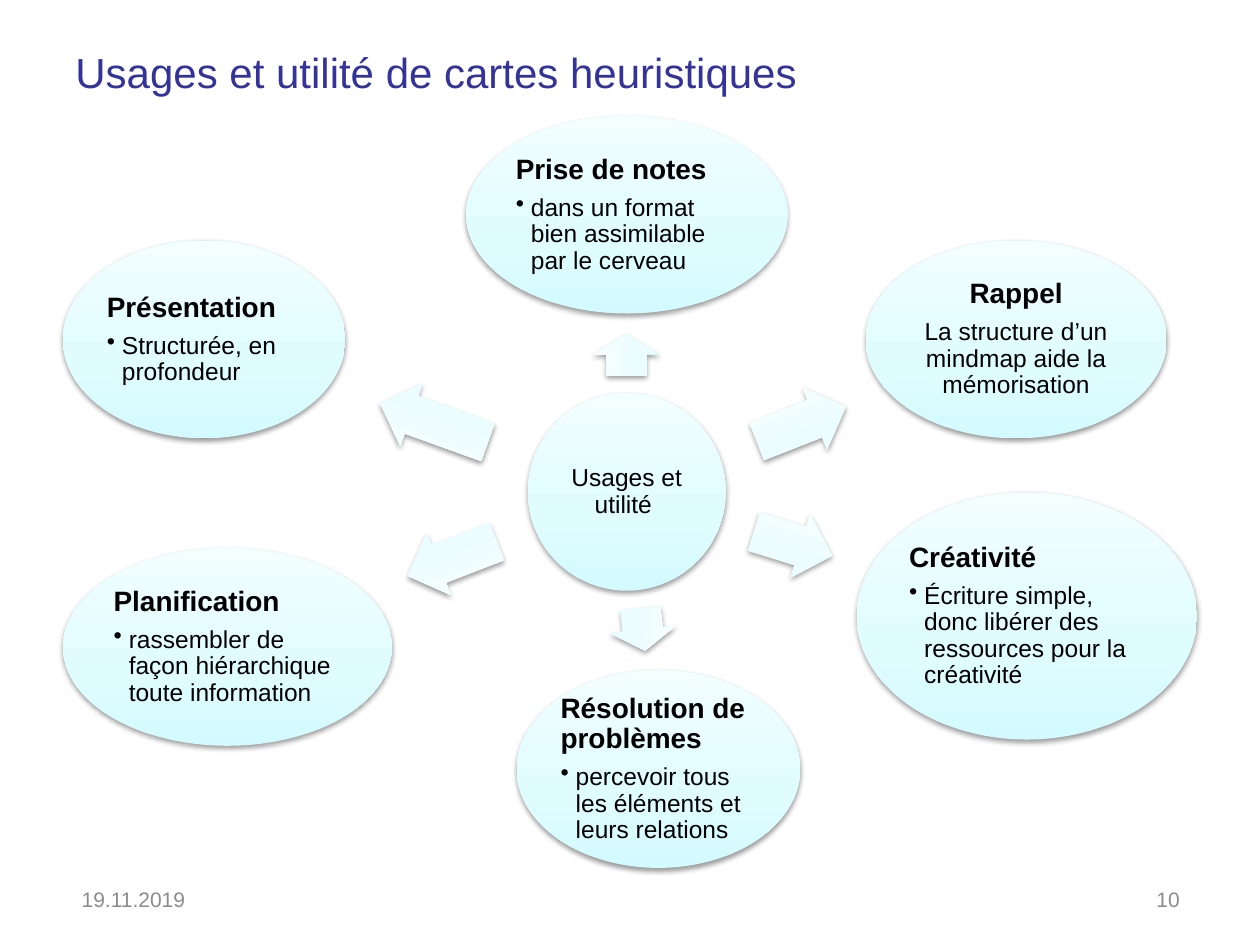
from dataclasses import dataclass

from lxml import etree
from pptx import Presentation
from pptx.dml.color import RGBColor
from pptx.enum.shapes import MSO_SHAPE
from pptx.enum.text import MSO_ANCHOR, PP_ALIGN
from pptx.oxml import parse_xml
from pptx.oxml.ns import nsdecls, qn
from pptx.util import Pt

OVAL, ARROW = MSO_SHAPE.OVAL, MSO_SHAPE.RIGHT_ARROW
MIDDLE = MSO_ANCHOR.MIDDLE
LEFT, CENTER, RIGHT = PP_ALIGN.LEFT, PP_ALIGN.CENTER, PP_ALIGN.RIGHT

BLACK = RGBColor(0x00, 0x00, 0x00)
INDIGO = RGBColor(0x33, 0x33, 0x99)
GREY = RGBColor(0x8C, 0x8C, 0x8C)
# Gradient stops at 0, 35 and 100 %, running from bottom to top
STOPS = (0, 35, 100)
BUBBLE_FILL = (RGBColor(0xD3, 0xFB, 0xFF), RGBColor(0xDF, 0xFC, 0xFF),
               RGBColor(0xF2, 0xFE, 0xFF))
ARROW_FILL = (RGBColor(0xE5, 0xFD, 0xFF), RGBColor(0xEC, 0xFD, 0xFF),
              RGBColor(0xF7, 0xFE, 0xFF))

FONT = "Arial"
INSET = 1.44
INDENT = 8.64
ARROW_BREADTH = 38.2


@dataclass(frozen=True)
class Frame:
    left: float
    top: float
    width: float
    height: float

    def lengths(self):
        return [Pt(v) for v in (self.left, self.top, self.width, self.height)]


@dataclass(frozen=True)
class Arrow:
    left: float
    top: float
    length: float
    rotation: float


@dataclass(frozen=True)
class Topic:
    heading: str
    detail: str
    frame: Frame
    arrow: Arrow
    bulleted: bool = True


HUB = Frame(301.7, 224.6, 113, 113)
TOPICS = [
    Topic("Prise de notes", "dans un format bien assimilable par le cerveau",
          Frame(266.4, 66.2, 183.6, 113), Arrow(346.3, 183.6, 23.8, 270)),
    Topic("Rappel", "La structure d’un mindmap aide la mémorisation",
          Frame(494.6, 137.5, 172.1, 113), Arrow(430.6, 223.2, 54.7, 338.6),
          bulleted=False),
    Topic("Créativité",
          "Écriture simple, donc libérer des ressources pour la créativité",
          Frame(489.6, 281.5, 194.4, 141.1), Arrow(429.8, 291.6, 46.8, 17.2)),
    Topic("Résolution de problèmes",
          "percevoir tous les éléments et leurs relations",
          Frame(295.2, 383, 162, 113), Arrow(355, 340.6, 24.5, 83.5)),
    Topic("Planification", "rassembler de façon hiérarchique toute information",
          Frame(36, 313.2, 187.9, 113), Arrow(231.1, 300.2, 54.7, 158.9)),
    Topic("Présentation", "Structurée, en profondeur",
          Frame(36, 137.5, 161.3, 113), Arrow(215.3, 222.5, 65.5, 199.8)),
]


def set_all(target, values: dict) -> None:
    for name, value in values.items():
        setattr(target, name, value)


def write(para, text: str, size: float, color: RGBColor = BLACK,
          bold: bool = False, **layout) -> None:
    """Fill a paragraph with one span; layout holds paragraph attributes."""
    set_all(para, layout)
    span = para.add_run()
    span.text = text
    set_all(span.font, {"name": FONT, "size": Pt(size), "bold": bold})
    span.font.color.rgb = color


def add_bullet(para) -> None:
    props = para._p.get_or_add_pPr()
    props.set("marL", str(Pt(INDENT)))
    props.set("indent", str(-Pt(INDENT)))
    etree.SubElement(props, qn("a:buChar")).set("char", "•")


def add_glossy(page, kind, frame: Frame, colors: tuple):
    """Add a borderless shape with a vertical gradient and a soft shadow."""
    shape = page.shapes.add_shape(kind, *frame.lengths())
    shape.line.fill.background()
    shape.shadow.inherit = False
    props = shape._element.spPr
    stops = "".join(
        f'<a:gs pos="{pos * 1000}"><a:srgbClr val="{color}"/></a:gs>'
        for pos, color in zip(STOPS, colors))
    props.find(qn("a:prstGeom")).addnext(parse_xml(
        f'<a:gradFill {nsdecls("a")} rotWithShape="1"><a:gsLst>{stops}</a:gsLst>'
        '<a:lin ang="16200000" scaled="0"/></a:gradFill>'))
    props.find(qn("a:effectLst")).append(parse_xml(
        f'<a:outerShdw {nsdecls("a")} blurRad="{Pt(3.1)}" dist="{Pt(1.6)}" '
        'dir="5400000" rotWithShape="0"><a:srgbClr val="000000">'
        '<a:alpha val="38000"/></a:srgbClr></a:outerShdw>'))
    return shape


def add_bubble(page, frame: Frame):
    """Add an ellipse and return its text frame."""
    box = add_glossy(page, OVAL, frame, BUBBLE_FILL).text_frame
    sides = ("left", "top", "right", "bottom")
    set_all(box, {f"margin_{side}": Pt(INSET) for side in sides})
    set_all(box, {"word_wrap": True, "vertical_anchor": MIDDLE})
    return box


def add_arrow(page, arrow: Arrow) -> None:
    frame = Frame(arrow.left, arrow.top, arrow.length, ARROW_BREADTH)
    shape = add_glossy(page, ARROW, frame, ARROW_FILL)
    shape.rotation = arrow.rotation
    shape.adjustments[0] = 0.6
    shape.adjustments[1] = 0.5


def add_topic(page, topic: Topic) -> None:
    add_arrow(page, topic.arrow)
    box = add_bubble(page, topic.frame)
    layout = {"alignment": LEFT if topic.bulleted else CENTER,
              "line_spacing": 0.9}
    write(box.paragraphs[0], topic.heading, 16, bold=True,
          space_after=Pt(5.6), **layout)
    detail = box.add_paragraph()
    write(detail, topic.detail, 14,
          space_after=Pt(2.1 if topic.bulleted else 4.9), **layout)
    if topic.bulleted:
        detail.level = 1
        add_bullet(detail)


def add_label(page, frame: Frame, text: str, size: float, color: RGBColor,
              alignment=LEFT) -> None:
    box = page.shapes.add_textbox(*frame.lengths()).text_frame
    set_all(box, {"word_wrap": True, "vertical_anchor": MIDDLE})
    write(box.paragraphs[0], text, size, color, alignment=alignment)


def main() -> None:
    deck = Presentation()
    set_all(deck, {"slide_width": Pt(720), "slide_height": Pt(540)})
    page = deck.slides.add_slide(deck.slide_layouts[6])

    add_label(page, Frame(36, 21.6, 648, 38.9),
              "Usages et utilité de cartes heuristiques", 24, INDIGO)
    hub = add_bubble(page, HUB)
    write(hub.paragraphs[0], "Usages et utilité ", 14, alignment=CENTER,
          line_spacing=0.9, space_after=Pt(4.9))
    for topic in TOPICS:
        add_topic(page, topic)
    add_label(page, Frame(39.6, 500.4, 167.8, 26.6), "19.11.2019", 12, GREY)
    add_label(page, Frame(513.4, 502.6, 167.8, 22.3), "10", 12, GREY, RIGHT)

    deck.save("out.pptx")


if __name__ == "__main__":
    main()
